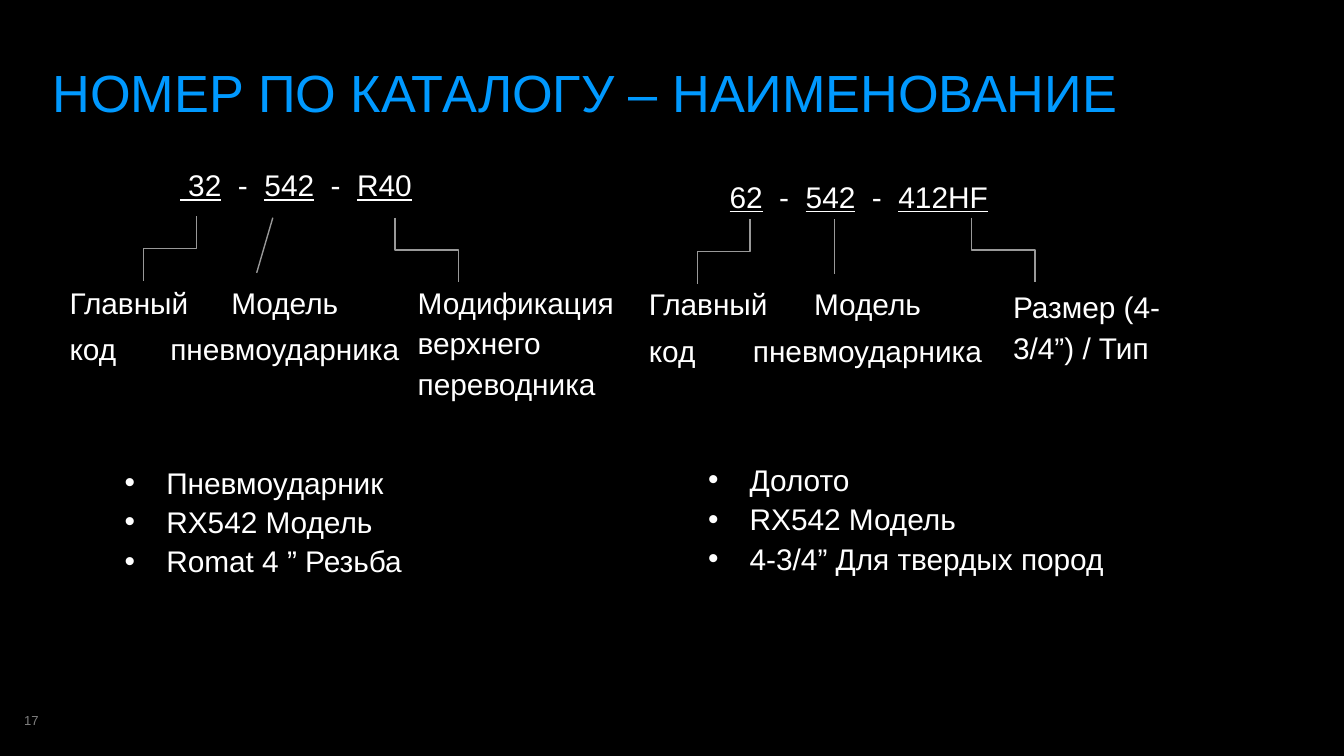
from lxml.etree import SubElement
from pptx import Presentation
from pptx.dml.color import RGBColor
from pptx.enum.shapes import MSO_CONNECTOR
from pptx.enum.text import MSO_ANCHOR, PP_ALIGN
from pptx.oxml.ns import qn
from pptx.util import Inches, Pt

HUES = {"back": "000000", "head": "0099FF", "text": "FFFFFF",
        "line": "999999", "page": "7F7F7F"}
WIDE = 10     # slide width, at 16 to 9
PAD = 0.1     # side inset of a text box
STEP = 0.41   # left indent of codes and labels
HANG = 0.31   # hanging indent of bullets

deck = Presentation()
deck.slide_width, deck.slide_height = Inches(WIDE), Inches(WIDE * 9 / 16)
slide = deck.slides.add_slide(deck.slide_layouts[6])
slide.background.fill.solid()
slide.background.fill.fore_color.rgb = RGBColor.from_string(HUES["back"])


def write(place, paras, size=16, hue="text", pad=PAD, left=0, first=0,
          mark=None, gap=0, **form):
    """Add a text box; each paragraph is a list of (text, underline) runs."""
    frame = slide.shapes.add_textbox(*map(Inches, place)).text_frame
    frame.word_wrap = True
    frame.margin_left = frame.margin_right = Inches(pad)
    frame.margin_top = frame.margin_bottom = Inches(pad / 2)
    for num, runs in enumerate(paras):
        para = frame.paragraphs[0] if num == 0 else frame.add_paragraph()
        props = para._p.get_or_add_pPr()
        props.set("marL", str(Inches(left)))
        props.set("indent", str(Inches(first)))
        if mark:
            SubElement(props, qn("a:buFont"), typeface="Arial")
            SubElement(props, qn("a:buChar"), char=mark)
        for key, val in form.items():
            setattr(para, key, val)
        if num and gap:
            para.space_before = Pt(gap)
        for text, under in runs:
            run = para.add_run()
            run.text = text
            look = {"name": "Arial", "size": Pt(size), "underline": under}
            for key, val in look.items():
                setattr(run.font, key, val)
            run.font.color.rgb = RGBColor.from_string(HUES[hue])
    return frame


def link(x1, y1, x2, y2, bent=True):
    """Join two points; a bent link leaves and arrives upright."""
    kind = MSO_CONNECTOR.ELBOW if bent else MSO_CONNECTOR.STRAIGHT
    ends = (x1, y1, x2, y2)
    if bent:
        # The elbow is laid flat about its centre, then turned upright
        side = 1 if x2 < x1 else -1
        midx, midy = (x1 + x2) / 2, (y1 + y2) / 2
        wide, high = side * (y2 - y1) / 2, abs(x2 - x1) / 2
        ends = (midx - wide, midy - high, midx + wide, midy + high)
    line = slide.shapes.add_connector(kind, *map(Inches, ends))
    line.line.width = Pt(0.75)
    line.line.color.rgb = RGBColor.from_string(HUES["line"])
    props = line._element.spPr
    SubElement(props, qn("a:effectLst"))
    if bent:
        turn = 90 if side == 1 else 270
        props.find(qn("a:xfrm")).set("rot", str(turn * 60000))


# Title and page number
write((0.39, 0.45, 9.21, 0.39), [[("НОМЕР ПО КАТАЛОГУ – НАИМЕНОВАНИЕ", False)]],
      size=28, hue="head", pad=0)
page = write((0.18, 5.12, 0.67, 0.3), [[("17", False)]],
             size=7, hue="page", pad=0)
page.vertical_anchor = MSO_ANCHOR.BOTTOM

# Catalogue codes, with underlined parts
dash = ("  -  ", False)
codes = [
    ((0.43, 1.24, 4.43, 1.89), (" 32", "542", "R40"), 0, 0.91, 1.0),
    ((4.92, 1.24, 4.39, 1.65), ("62", "542", "412HF"), PAD, STEP, 1.14),
]
for place, parts, pad, left, space in codes:
    runs = [(parts[0], True)]
    for part in parts[1:]:
        runs += [dash, (part, True)]
    write(place, [runs], pad=pad, left=left, line_spacing=space)

# Labels under each code part
main, model = ["Главный", "код"], ["Модель", "пневмоударника"]
labels = [
    ((0.01, 2.03, 1.56, 0.7), main, PP_ALIGN.LEFT),
    ((0.75, 2.03, 2.33, 0.7), model, PP_ALIGN.CENTER),
    ((2.6, 2.03, 2.14, 0.7), ["Модификация верхнего переводника"], PP_ALIGN.LEFT),
    ((4.32, 2.04, 1.57, 0.7), main, PP_ALIGN.LEFT),
    ((5.06, 2.04, 2.38, 0.7), model, PP_ALIGN.CENTER),
    ((7.03, 2.06, 1.97, 0.7), ["Размер (4-3/4”) / Тип"], PP_ALIGN.LEFT),
]
for place, lines, side in labels:
    write(place, [[(text, False)] for text in lines], left=STEP, gap=3.2,
          line_spacing=1.14, alignment=side)

# Links from code parts to labels
for ends in [(1.46, 1.61, 1.07, 2.09), (2.94, 1.62, 3.41, 2.1),
             (5.58, 1.63, 5.19, 2.11), (7.23, 1.62, 7.7, 2.1)]:
    link(*ends)
link(2.03, 1.62, 1.91, 2.03, bent=False)
link(6.21, 1.63, 6.21, 2.04, bent=False)

# Bullet lists
lists = [
    (0.83, 3.38, ["Пневмоударник", "RX542 Модель", "Romat 4 ” Резьба"]),
    (5.17, 3.36, ["Долото", "RX542 Модель", "4-3/4” Для твердых пород"]),
]
for x, y, items in lists:
    write((x, y, 3.94, 1.34), [[(item, False)] for item in items],
          left=HANG, first=-HANG, mark="•", line_spacing=1.1)

deck.save("out.pptx")
